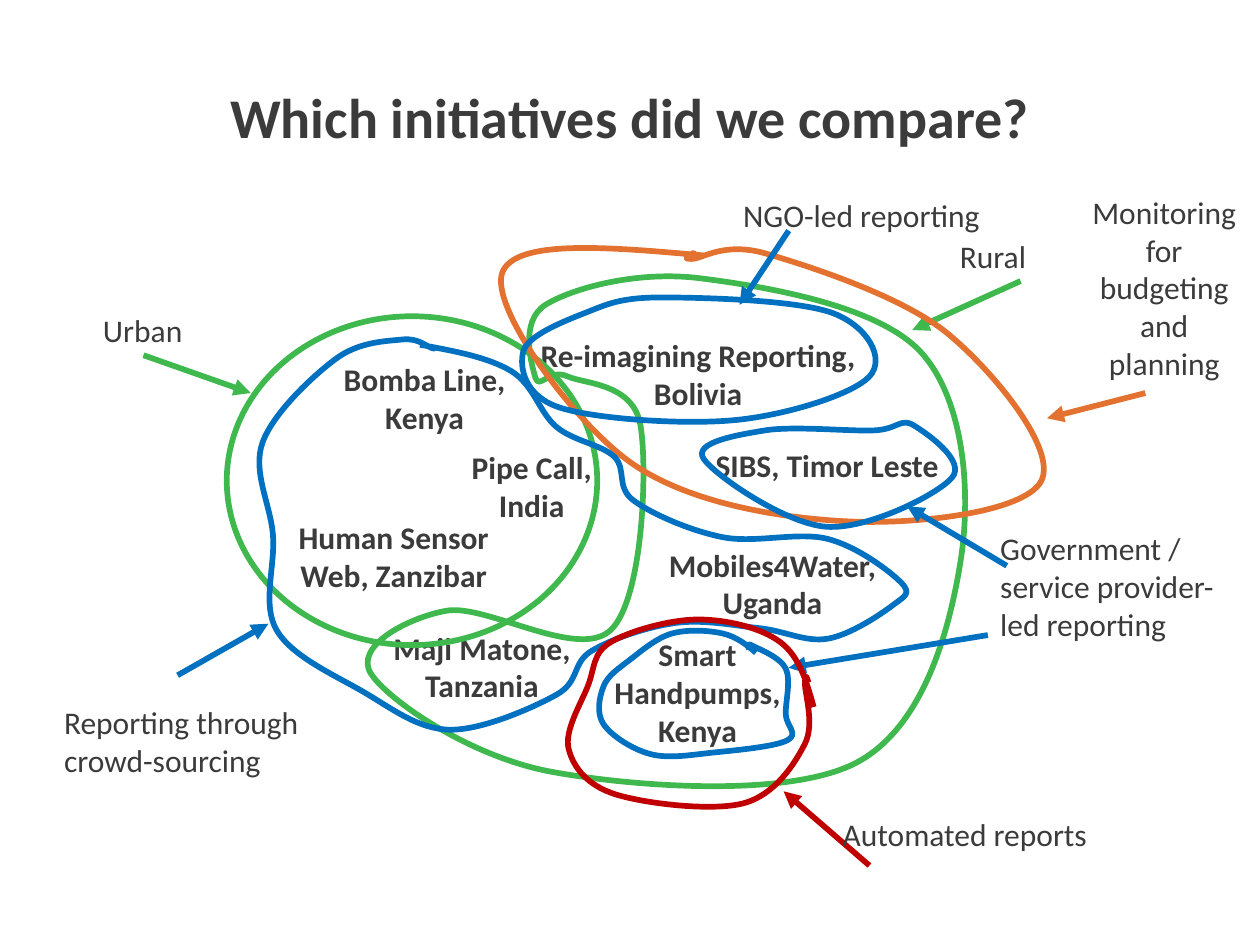
"""Build the slide that maps water reporting initiatives into overlapping groups."""
from lxml import etree
from pptx import Presentation
from pptx.dml.color import RGBColor
from pptx.enum import shapes, text
from pptx.oxml.ns import qn
from pptx.util import Pt

TITLE = "Which initiatives did we compare?"
FONT, INK = "Calibri", "3B3B3C"
GREEN, ORANGE, BLUE, RED = "3FB84E", "E37230", "0070C0", "C00000"
LINE_WIDTH = 3.25
STEPS = 12
LEFT, CENTER = text.PP_ALIGN.LEFT, text.PP_ALIGN.CENTER

INITIATIVES = [
    ("Bomba Line, Kenya", (183.6, 202.3, 118, 51), True),
    ("Pipe Call, India", (247.7, 252.7, 112.3, 51), True),
    ("Human Sensor Web, Zanzibar", (148.3, 292.3, 153.4, 51), True),
    ("Re-imagining Reporting,\nBolivia", (301, 188.6, 195.8, 51), False),
    ("SIBS, Timor Leste", (401, 251.3, 143.3, 29), False),
    ("Mobiles4Water, Uganda", (362.2, 308.2, 158.4, 51), True),
    ("Maji Matone, Tanzania", (201.6, 355.7, 147.6, 51), True),
    ("Smart Handpumps, Kenya", (333.4, 359.3, 130.3, 73), True),
]

URBAN_ELLIPSE = (129.6, 180.7, 211.7, 187.9)
RURAL_OUTLINE = [
    (400, 159), (526, 201), (549, 320), (489, 436), (315, 441), (212, 385),
    (255, 349), (349, 360), (366, 243), (324, 215), (306, 216), (312, 174)]
MONITORING_OUTLINE = [
    (402, 146), (287, 156), (360, 264), (485, 298), (595, 275), (542, 191),
    (438, 145), (395, 148), (397, 145), (395, 145)]
CROWD_OUTLINE = [
    (240, 197), (292, 212), (318, 244), (351, 261), (362, 286), (413, 307),
    (473, 308), (515, 333), (510, 346), (473, 365), (434, 359), (386, 356),
    (338, 372), (318, 397), (257, 417), (207, 395), (158, 360), (156, 306),
    (150, 253), (192, 205), (230, 194), (247, 199), (246, 198)]
SIBS_OUTLINE = [
    (499, 246), (437, 246), (402, 262), (472, 301), (544, 273), (522, 243)]
HANDPUMP_OUTLINE = [
    (432, 373), (413, 362), (384, 362), (360, 377), (345, 392), (345, 414),
    (372, 431), (408, 430), (450, 423), (449, 408), (449, 382), (430, 369),
    (428, 371)]
NGO_OUTLINE = [
    (378, 170), (334, 179), (299, 201), (320, 233), (421, 240), (497, 215),
    (476, 179)]
AUTOMATED_OUTLINE = [
    (465, 404), (446, 367), (399, 354), (349, 367), (336, 392), (325, 428),
    (352, 454), (425, 459), (460, 425), (460, 390), (462, 390)]

GROUPS = [
    {"label": "Urban", "box": (51.8, 174.2, 60.5, 29), "wrap": False,
     "color": GREEN, "arrows": [(82, 203, 143.3, 224.6)], "outlines": []},
    {"label": "Rural", "box": (541.4, 131.8, 84.2, 29),
     "color": GREEN, "arrows": [(583.2, 160.6, 521.3, 188.6)],
     "outlines": [(RURAL_OUTLINE, True)]},
    {"label": "Monitoring for budgeting and planning",
     "box": (614.9, 106.6, 100.8, 116.6), "align": CENTER,
     "color": ORANGE, "arrows": [(654.5, 224.6, 598.3, 239)],
     "outlines": [(MONITORING_OUTLINE, False)]},
    {"label": "Government / service provider-led reporting",
     "box": (564.5, 298.8, 155.5, 73), "color": BLUE,
     "arrows": [(575.3, 323.3, 518.4, 289.4), (564.5, 362.9, 450.7, 381.6)],
     "outlines": [(SIBS_OUTLINE, True), (HANDPUMP_OUTLINE, False)]},
    {"label": "Reporting through crowd-sourcing",
     "box": (29.5, 398.2, 188.6, 51), "color": BLUE,
     "arrows": [(101.5, 385.9, 153.4, 356.4)],
     "outlines": [(CROWD_OUTLINE, False)]},
    {"label": "NGO-led reporting", "box": (417.6, 108.3, 151.2, 29),
     "wrap": False, "color": BLUE, "arrows": [(450.7, 131.8, 422.6, 174.2)],
     "outlines": [(NGO_OUTLINE, True)]},
    {"label": "Automated reports", "box": (474.5, 462.2, 155.5, 29),
     "wrap": False, "color": RED, "arrows": [(496.8, 494.6, 447.8, 452.2)],
     "outlines": [(AUTOMATED_OUTLINE, False)]},
]


def points(values):
    return [Pt(value) for value in values]


def rgb(color):
    return RGBColor.from_string(color)


def format_text(frame, size, bold, align):
    for paragraph in frame.paragraphs:
        paragraph.alignment = align
        for run in paragraph.runs:
            run.font.name, run.font.size, run.font.bold = FONT, Pt(size), bold
            run.font.color.rgb = rgb(INK)


def add_text(slide, content, box, wrap=True, bold=False, align=LEFT):
    frame = slide.shapes.add_textbox(*points(box)).text_frame
    frame.word_wrap = wrap
    frame.auto_size = text.MSO_AUTO_SIZE.SHAPE_TO_FIT_TEXT
    frame.text = content
    format_text(frame, 18, bold, align)


def style_line(line, color):
    line.color.rgb = rgb(color)
    line.width = Pt(LINE_WIDTH)


def style_outline(shape, color):
    shape.shadow.inherit = False
    shape.fill.background()
    style_line(shape.line, color)


def add_arrow(slide, ends, color):
    arrow = slide.shapes.add_connector(shapes.MSO_CONNECTOR.STRAIGHT, *points(ends))
    style_line(arrow.line, color)
    etree.SubElement(arrow.line._get_or_add_ln(), qn("a:tailEnd"), type="triangle")
    etree.SubElement(arrow._element.spPr, qn("a:effectLst"))


def blend(first, second, share):
    return tuple(a + (b - a) * share for a, b in zip(first, second))


def bezier_segments(knots, closed):
    """Return start, two control points and end for each smooth segment."""
    count = len(knots)
    segments = []
    for i in range(count if closed else count - 1):
        start, end = knots[i], knots[(i + 1) % count]
        before, after = knots[i - 1], knots[(i + 2) % count]
        leave = tuple(s + (e - b) / 6 for s, e, b in zip(start, end, before))
        arrive = tuple(e - (a - s) / 6 for e, a, s in zip(end, after, start))
        if not closed and i == 0:
            leave = blend(start, arrive, 0.5)
        if not closed and i == count - 2:
            arrive = blend(leave, end, 0.5)
        segments.append((start, leave, arrive, end))
    return segments


def point_on(segment, share):
    while len(segment) > 1:
        segment = [blend(a, b, share) for a, b in zip(segment, segment[1:])]
    return segment[0]


def add_outline(slide, knots, closed, color):
    """Size the freeform by the points its curve passes, then set the curve."""
    segments = bezier_segments(knots, closed)
    traced = [points(point_on(segment, step / STEPS))
              for segment in segments for step in range(1, STEPS + 1)]
    builder = slide.shapes.build_freeform(*points(knots[0]))
    builder.add_line_segments(traced, close=closed)
    shape = builder.convert_to_shape()
    outline = next(shape._element.iter(qn("a:moveTo"))).getparent()
    for line in outline.findall(qn("a:lnTo")):
        outline.remove(line)
    for position, segment in enumerate(segments, start=1):
        curve = etree.Element(qn("a:cubicBezTo"))
        for x, y in segment[1:]:
            etree.SubElement(curve, qn("a:pt"), x=str(Pt(x) - shape.left),
                             y=str(Pt(y) - shape.top))
        outline.insert(position, curve)
    style_outline(shape, color)


def main():
    presentation = Presentation()
    presentation.slide_width, presentation.slide_height = Pt(720), Pt(540)
    slide = presentation.slides.add_slide(presentation.slide_layouts[5])

    title = slide.shapes.title
    title.left, title.top, title.width, title.height = points((36, 21.6, 648, 90))
    title.text_frame.text = TITLE
    title.text_frame.vertical_anchor = text.MSO_ANCHOR.MIDDLE
    format_text(title.text_frame, 32, True, CENTER)

    for name, box, wrap in INITIATIVES:
        add_text(slide, name, box, wrap, True, CENTER)

    ellipse = slide.shapes.add_shape(shapes.MSO_SHAPE.OVAL, *points(URBAN_ELLIPSE))
    style_outline(ellipse, GREEN)

    for group in GROUPS:
        for knots, closed in group["outlines"]:
            add_outline(slide, knots, closed, group["color"])
        for ends in group["arrows"]:
            add_arrow(slide, ends, group["color"])
        add_text(slide, group["label"], group["box"], group.get("wrap", True),
                 align=group.get("align", LEFT))

    presentation.save("out.pptx")


if __name__ == "__main__":
    main()
